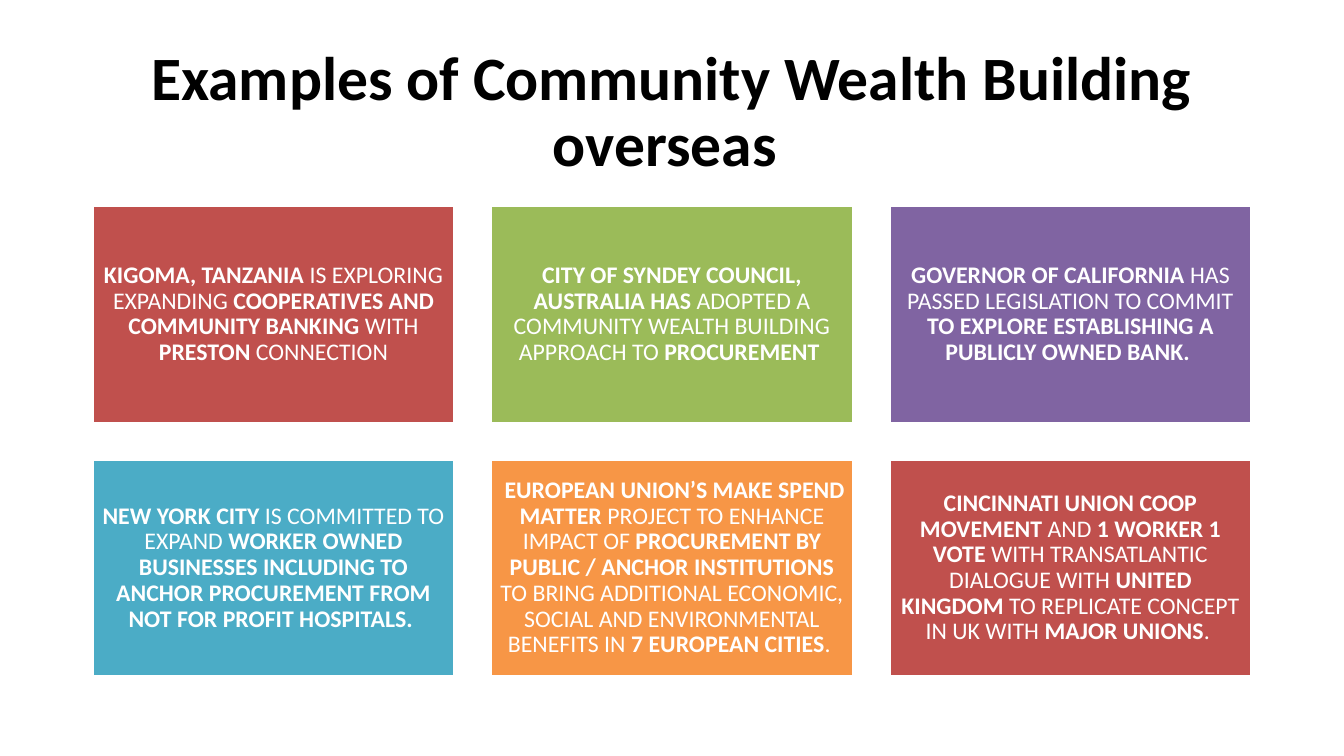
from dataclasses import dataclass

from pptx import Presentation
from pptx.dml.color import RGBColor
from pptx.enum import shapes, text
from pptx.slide import Slide
from pptx.text.text import TextFrame
from pptx.util import Pt

BLACK = RGBColor(0x00, 0x00, 0x00)
WHITE = RGBColor(0xFF, 0xFF, 0xFF)
RED = RGBColor(0xC0, 0x50, 0x4D)
GREEN = RGBColor(0x9B, 0xBB, 0x59)
PURPLE = RGBColor(0x80, 0x64, 0xA2)
TEAL = RGBColor(0x4B, 0xAC, 0xC6)
ORANGE = RGBColor(0xF7, 0x96, 0x46)

LEFT, TOP = 66, 146.9
CARD_WIDTH, CARD_HEIGHT = 258.75, 155.25
GAP = 25.87
COLUMNS = 3

TITLE = "Examples of Community Wealth Building overseas "
TITLE_FONT = {"name": "Calibri", "size": Pt(44)}
CARD_FONT = {"name": "Calibri", "size": Pt(17)}
CARD_FRAME = {f"margin_{side}": Pt(5.1) for side in ("left", "top", "right", "bottom")}


@dataclass(frozen=True)
class Card:
    """One example; its spans alternate between bold and regular, bold first."""
    fill: RGBColor
    spans: tuple[str, ...]


CARDS = (
    Card(RED, ("KIGOMA, TANZANIA ", "IS EXPLORING EXPANDING ",
               "COOPERATIVES AND COMMUNITY BANKING ", "WITH ",
               "PRESTON ", "CONNECTION")),
    Card(GREEN, ("CITY OF SYNDEY COUNCIL, AUSTRALIA HAS ",
                 "ADOPTED A COMMUNITY WEALTH BUILDING APPROACH TO ",
                 "PROCUREMENT ")),
    Card(PURPLE, ("GOVERNOR OF CALIFORNIA ", "HAS PASSED LEGISLATION TO COMMIT ",
                  "TO EXPLORE ESTABLISHING A PUBLICLY OWNED BANK. ")),
    Card(TEAL, ("NEW YORK CITY ", "IS COMMITTED TO EXPAND ",
                "WORKER OWNED BUSINESSES INCLUDING TO ANCHOR PROCUREMENT "
                "FROM NOT FOR PROFIT HOSPITALS. ")),
    Card(ORANGE, (" EUROPEAN UNION’S MAKE SPEND MATTER ",
                  "PROJECT TO ENHANCE IMPACT OF ",
                  "PROCUREMENT BY PUBLIC / ANCHOR INSTITUTIONS ",
                  "TO BRING ADDITIONAL ECONOMIC, SOCIAL AND ENVIRONMENTAL BENEFITS IN ",
                  "7 EUROPEAN CITIES", ". ")),
    Card(RED, ("CINCINNATI UNION COOP MOVEMENT ", "AND", " 1 WORKER 1 VOTE ",
               "WITH TRANSATLANTIC DIALOGUE WITH ", "UNITED KINGDOM ",
               "TO REPLICATE CONCEPT IN UK WITH ", "MAJOR UNIONS", ". ")),
)


def set_all(target: object, values: dict) -> None:
    for name, value in values.items():
        setattr(target, name, value)


def write_spans(frame: TextFrame, spans: tuple[str, ...], font: dict,
                color: RGBColor) -> None:
    """Write one centred paragraph whose spans alternate bold and regular."""
    frame.word_wrap = True
    frame.vertical_anchor = text.MSO_ANCHOR.MIDDLE
    para = frame.paragraphs[0]
    set_all(para, {"alignment": text.PP_ALIGN.CENTER, "line_spacing": 0.9})
    for index, words in enumerate(spans):
        span = para.add_run()
        span.text = words
        set_all(span.font, {**font, "bold": index % 2 == 0})
        span.font.color.rgb = color


def draw_title(page: Slide) -> None:
    box = page.shapes.add_textbox(Pt(LEFT), Pt(28.75), Pt(828), Pt(104.4))
    write_spans(box.text_frame, (TITLE,), TITLE_FONT, BLACK)


def draw_card(page: Slide, card: Card, row: int, column: int) -> None:
    box = page.shapes.add_shape(
        shapes.MSO_SHAPE.RECTANGLE,
        Pt(LEFT + column * (CARD_WIDTH + GAP)), Pt(TOP + row * (CARD_HEIGHT + GAP)),
        Pt(CARD_WIDTH), Pt(CARD_HEIGHT))
    box.shadow.inherit = False
    box.fill.solid()
    box.fill.fore_color.rgb = card.fill
    box.line.color.rgb = WHITE
    box.line.width = Pt(2)
    set_all(box.text_frame, CARD_FRAME)
    write_spans(box.text_frame, card.spans, CARD_FONT, WHITE)


def main() -> None:
    deck = Presentation()
    deck.slide_width, deck.slide_height = Pt(960), Pt(540)
    page = deck.slides.add_slide(deck.slide_layouts[6])
    draw_title(page)
    for index, card in enumerate(CARDS):
        draw_card(page, card, *divmod(index, COLUMNS))
    deck.save("out.pptx")


if __name__ == "__main__":
    main()
